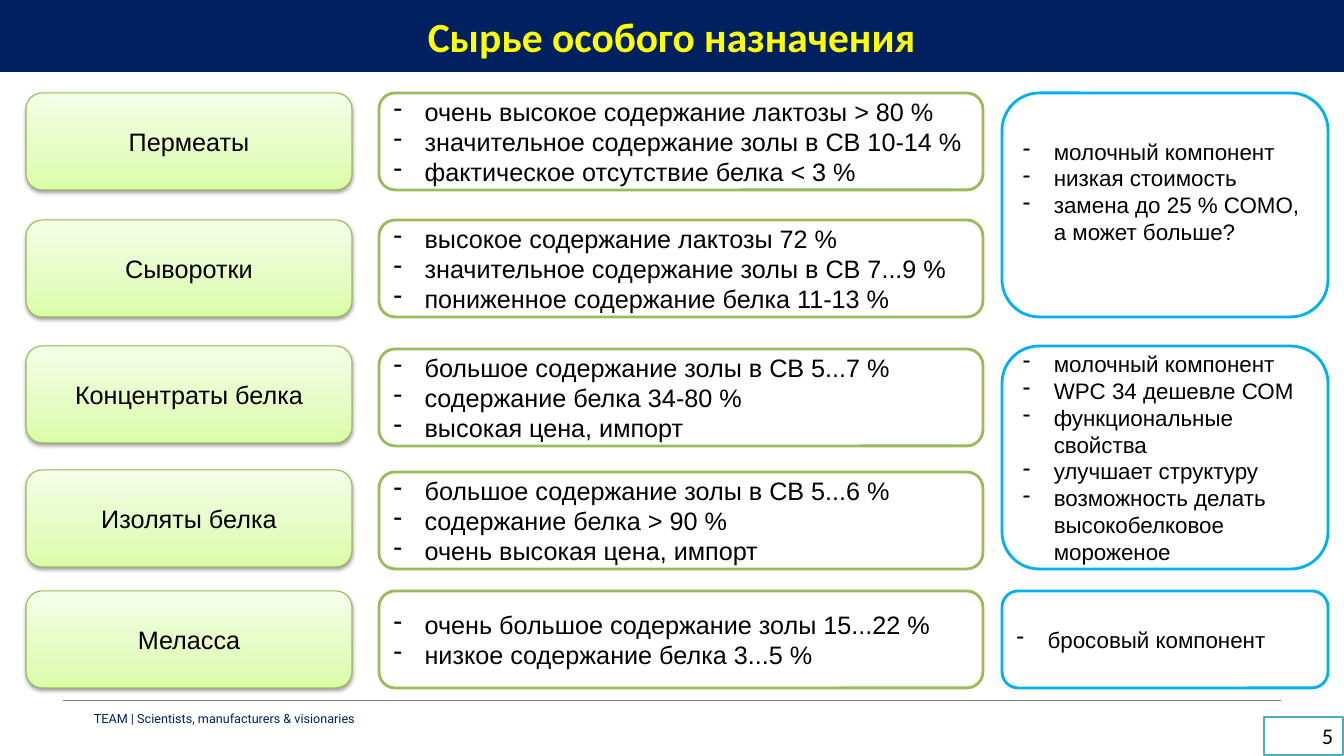
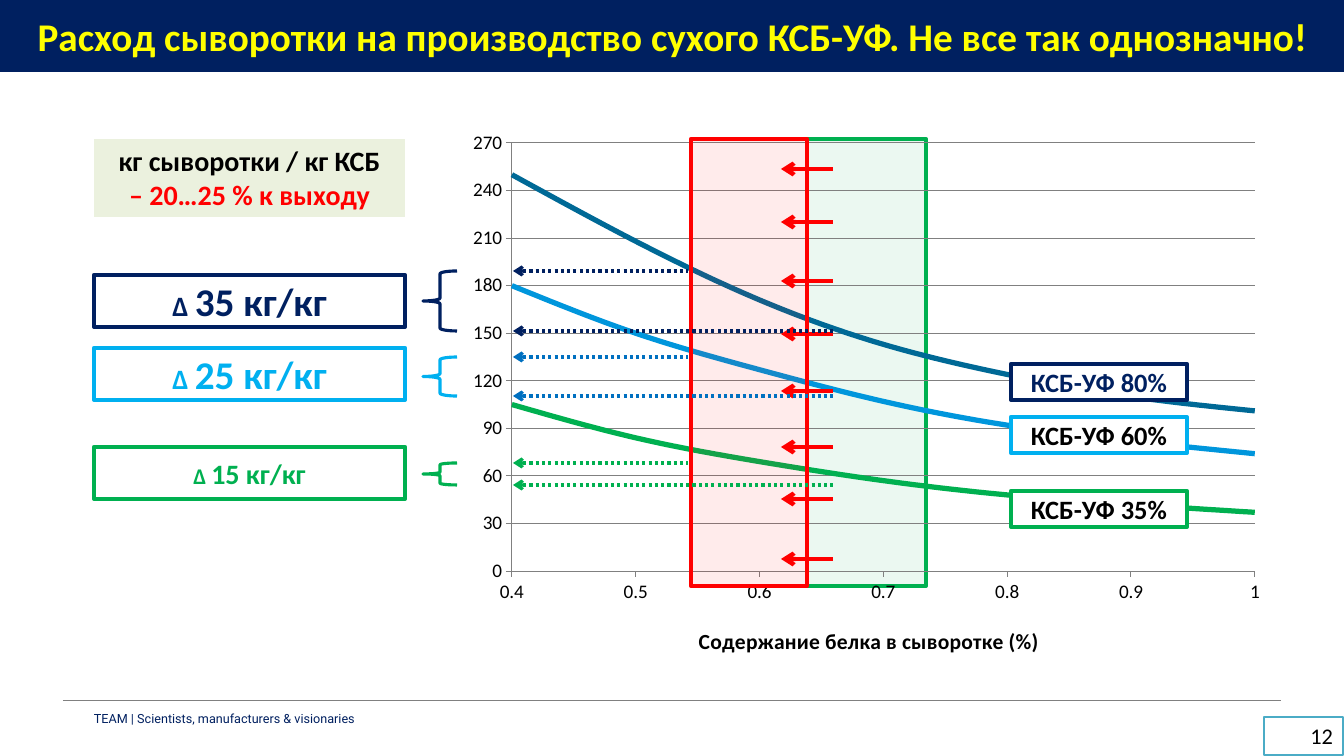
import pptx
import pptx.chart.data
import pptx.dml.color
import pptx.enum.chart
import pptx.enum.dml
import pptx.enum.shapes
import pptx.enum.text
import pptx.oxml.ns
import pptx.util
from lxml import etree

SCALE = 12192000 / 1344  # EMU in one px
NAVY, SKY, GREEN, RED = "002060", "00B0F0", "00B050", "FF0000"
BLUE, YELLOW, WHITE, BLACK, GREY = "0070C0", "FFFF00", "FFFFFF", "000000", "808080"
OLIVE, OLIVE_EDGE, CREAM, TEAL = "9BBB59", "98B955", "EBF1DE", "4BACC6"
LABEL_STOPS = [(0, "DAFDA7"), (35, "E4FCC2"), (100, "F5FFE7")]

SHAPE = pptx.enum.shapes.MSO_SHAPE
ALIGN = pptx.enum.text.PP_ALIGN
ANCHOR = pptx.enum.text.MSO_ANCHOR
DOTTED = pptx.enum.dml.MSO_LINE.ROUND_DOT
TICK = pptx.enum.chart.XL_TICK_MARK
qn = pptx.oxml.ns.qn

# Slide 1: group, top of its label, top of its properties, properties
GROUPS = [
    ("Пермеаты", 93, 93, ["очень высокое содержание лактозы > 80 %",
                          "значительное содержание золы в СВ 10-14 %",
                          "фактическое отсутствие белка < 3 %"]),
    ("Сыворотки", 220, 220, ["высокое содержание лактозы 72 %",
                             "значительное содержание золы в СВ 7...9 %",
                             "пониженное содержание белка 11-13 %"]),
    ("Концентраты белка", 346, 349, ["большое содержание золы в СВ 5...7 %",
                                     "содержание белка 34-80 %",
                                     "высокая цена, импорт"]),
    ("Изоляты белка", 470, 472, ["большое содержание золы в СВ 5...6 %",
                                 "содержание белка > 90 %",
                                 "очень высокая цена, импорт"]),
    ("Меласса", 591, 591, ["очень большое содержание золы 15...22 %",
                           "низкое содержание белка 3...5 %"]),
]
# Top, height, bottom inset, conclusions
CONCLUSIONS = [
    (93, 224, 32, ["молочный компонент", "низкая стоимость",
                   "замена до 25 % СОМО, а может больше?"]),
    (346, 223, 5, ["молочный компонент", "WPC 34 дешевле СОМ",
                   "функциональные свойства", "улучшает структуру",
                   "возможность делать высокобелковое мороженое"]),
    (591, 97, 5, ["бросовый компонент"]),
]

# Slide 2: whey consumption by protein content
PROTEIN = [0.4, 0.5, 0.6, 0.7, 0.8, 0.9, 1]
CURVES = [
    ("КСБ-УФ 80%", "006996", [250, 208, 171, 143, 124, 110, 101]),
    ("КСБ-УФ 60%", "0096DC", [180, 150, 127, 107, 92, 82, 74]),
    ("КСБ-УФ 35%", GREEN, [105, 84, 69, 57, 48, 42, 37]),
]
# Curve name, top of its tag, edge, text colour
CURVE_TAGS = [("КСБ-УФ 80%", 364, NAVY, NAVY), ("КСБ-УФ 60%", 417, SKY, BLACK),
              ("КСБ-УФ 35%", 491, GREEN, BLACK)]
# Upper level, lower level, dots, brace and box colour, box top, text, sizes
DELTAS = [
    (271, 331, NAVY, NAVY, 275, "35 кг/кг", 20, 28),
    (357, 396, BLUE, SKY, 348, "25 кг/кг", 20, 28),
    (463, 485, GREEN, GREEN, 447, "15 кг/кг", 16, 20),
]
SHIFT_LEVELS = [169, 222, 281, 334, 391, 447, 499, 559]


def px(length):
    return pptx.util.Emu(round(length * SCALE))


def rgb(colour):
    return pptx.dml.color.RGBColor.from_string(colour)


def add_xml(parent, tag, **attributes):
    child = etree.SubElement(parent, qn(tag))
    for key, value in attributes.items():
        child.set(key, str(value))
    return child


def style_line(line, colour, width):
    line.color.rgb = rgb(colour)
    line.width = pptx.util.Pt(width)


def add_box(slide, at, fill=None, edge=None, width=2, kind=SHAPE.RECTANGLE, alpha=None):
    box = slide.shapes.add_shape(kind, *map(px, at))
    box.shadow.inherit = False
    if fill:
        box.fill.solid()
        box.fill.fore_color.rgb = rgb(fill)
        if alpha:
            tint = box.fill._xPr.find(".//" + qn("a:srgbClr"))
            add_xml(tint, "a:alpha", val=alpha * 1000)
    else:
        box.fill.background()
    if edge:
        style_line(box.line, edge, width)
    else:
        box.line.fill.background()
    return box


def write(box, paragraphs, font, align=ALIGN.CENTER, anchor=ANCHOR.MIDDLE, bold=False, dash=False):
    """Each paragraph is a list of (text, size, colour) runs."""
    frame = box.text_frame
    frame.word_wrap = True
    frame.vertical_anchor = anchor
    for number, runs in enumerate(paragraphs):
        paragraph = frame.paragraphs[0] if number == 0 else frame.add_paragraph()
        paragraph.alignment = align
        if dash:
            properties = paragraph._p.get_or_add_pPr()
            properties.set("marL", str(px(31)))
            properties.set("indent", str(-px(31)))
            add_xml(properties, "a:buChar", char="-")
        for text, size, colour in runs:
            run = paragraph.add_run()
            run.text = text
            run.font.name = font
            run.font.size = pptx.util.Pt(size)
            run.font.bold = bold
            run.font.color.rgb = rgb(colour)


def add_line(slide, start, end, colour, width, dash=None, arrow=False):
    """Draw a straight line, with an optional arrowhead at its start."""
    line = slide.shapes.add_connector(pptx.enum.shapes.MSO_CONNECTOR.STRAIGHT,
                                      *map(px, start + end))
    style_line(line.line, colour, width)
    if dash:
        line.line.dash_style = dash
    if arrow:
        add_xml(line.line._get_or_add_ln(), "a:headEnd", type="arrow")
    add_xml(line._element.spPr, "a:effectLst")


def add_dash_list(slide, at, items, size, edge):
    box = add_box(slide, at, WHITE, edge, kind=SHAPE.ROUNDED_RECTANGLE)
    write(box, [[(item, size, BLACK)] for item in items], "Arial", ALIGN.LEFT, dash=True)
    return box


def add_group_label(slide, at, text):
    label = add_box(slide, at, WHITE, OLIVE_EDGE, 0.75, SHAPE.ROUNDED_RECTANGLE)
    # Three-stop gradient, light at the top
    label.fill.gradient()
    label.fill.gradient_angle = 90
    properties = label._element.spPr
    stops = properties.find(".//" + qn("a:gsLst"))
    for stop in list(stops):
        stops.remove(stop)
    for position, colour in LABEL_STOPS:
        stop = add_xml(stops, "a:gs", pos=position * 1000)
        add_xml(stop, "a:srgbClr", val=colour)
    # Soft shadow below
    shadow = add_xml(properties.find(qn("a:effectLst")), "a:outerShdw", blurRad=39400,
                     dist=20300, dir=5400000, rotWithShape=0)
    add_xml(add_xml(shadow, "a:srgbClr", val=BLACK), "a:alpha", val=38000)
    write(label, [[(text, 18, BLACK)]], "Arial")


def new_slide(deck, title, title_size, number):
    """Add a slide with the shared title band, rule, footer and number."""
    slide = deck.slides.add_slide(deck.slide_layouts[6])
    add_line(slide, (63, 700), (1281, 700), GREY, 0.5)
    band = add_box(slide, (0, 0, 1344, 72), NAVY)
    write(band, [[(title, title_size, YELLOW)]], "Calibri", bold=True)
    footer = slide.shapes.add_textbox(*map(px, (94, 699, 384, 38)))
    frame = footer.text_frame
    frame.margin_left = frame.margin_right = frame.margin_top = frame.margin_bottom = 0
    write(footer, [[("TEAM | Scientists, manufacturers & visionaries", 9, NAVY)]],
          "Roboto", ALIGN.LEFT)
    number_box = add_box(slide, (1264, 717, 79, 38), WHITE, TEAL)
    write(number_box, [[(number, 16, BLACK)]], "Calibri", ALIGN.RIGHT, ANCHOR.TOP)
    return slide


def set_layout(holder, index, **fractions):
    """Fix the place of a chart part, in fractions of the chart."""
    for old in holder.findall(qn("c:layout")):
        holder.remove(old)
    layout = etree.Element(qn("c:layout"))
    manual = add_xml(layout, "c:manualLayout")
    if "w" in fractions:
        add_xml(manual, "c:layoutTarget", val="inner")
    add_xml(manual, "c:xMode", val="edge")
    add_xml(manual, "c:yMode", val="edge")
    for key, value in fractions.items():
        add_xml(manual, "c:" + key, val=value)
    holder.insert(index, layout)


def style_axis(axis, low, high, step, grid):
    axis.minimum_scale, axis.maximum_scale, axis.major_unit = low, high, step
    axis.major_tick_mark, axis.minor_tick_mark = TICK.OUTSIDE, TICK.NONE
    axis.has_major_gridlines = grid
    axis.has_minor_gridlines = False
    axis.tick_labels.font.size = pptx.util.Pt(13.7)
    axis.tick_labels.font.name = "Calibri"
    axis.tick_labels.font.color.rgb = rgb(BLACK)
    style_line(axis.format.line, GREY, 0.75)
    if grid:
        style_line(axis.major_gridlines.format.line, GREY, 0.75)


def add_whey_chart(slide):
    data = pptx.chart.data.XyChartData()
    for name, _, values in CURVES:
        points = data.add_series(name)
        for x, y in zip(PROTEIN, values):
            points.add_data_point(x, y)
    chart = slide.shapes.add_chart(pptx.enum.chart.XL_CHART_TYPE.XY_SCATTER_SMOOTH_NO_MARKERS,
                                   *map(px, (457, 121, 820, 551)), data).chart
    chart.has_legend = chart.has_title = False
    chart.font.name = "Calibri"
    chart.font.size = pptx.util.Pt(15.4)
    chart.font.color.rgb = rgb(BLACK)
    plot = chart.plots[0]
    plot.vary_by_categories = False
    for series, (_, colour, _) in zip(plot.series, CURVES):
        style_line(series.format.line, colour, 3.75)
        for smooth in series._element.iter(qn("c:smooth")):
            smooth.set("val", "1")
    # Axes and axis title
    style_axis(chart.category_axis, 0.4, 1, 0.1, False)
    style_axis(chart.value_axis, 0, 270, 30, True)
    axis_title = chart.category_axis.axis_title
    caption = axis_title.text_frame.paragraphs[0].add_run()
    caption.text = "Содержание белка в сыворотке (%)"
    caption.font.size = pptx.util.Pt(15.4)
    caption.font.name = "Calibri"
    caption.font.bold = True
    caption.font.color.rgb = rgb(BLACK)
    set_layout(axis_title._element, 1, x=0.29, y=0.91)
    # Plot place, and no background so that the ranges show through
    body = chart._chartSpace.find(qn("c:chart"))
    plot_area = body.find(qn("c:plotArea"))
    set_layout(plot_area, 0, x=0.067, y=0.04, w=0.906, h=0.777)
    add_xml(add_xml(plot_area, "c:spPr"), "a:noFill")
    clear = etree.Element(qn("c:spPr"))
    add_xml(clear, "a:noFill")
    add_xml(add_xml(clear, "a:ln"), "a:noFill")
    body.addnext(clear)


def build_materials(deck):
    slide = new_slide(deck, "Сырье особого назначения", 29.6, "5")
    for name, label_top, list_top, properties in GROUPS:
        add_group_label(slide, (26, label_top, 326, 97), name)
        add_dash_list(slide, (379, list_top, 604, 97), properties, 18, OLIVE)
    for top, height, inset, conclusions in CONCLUSIONS:
        box = add_dash_list(slide, (1002, top, 326, height), conclusions, 16, SKY)
        box.text_frame.margin_bottom = px(inset)


def build_consumption(deck):
    title = "Расход сыворотки на производство сухого КСБ-УФ. Не все так однозначно!"
    slide = new_slide(deck, title, 28, "12")
    # Chart between the two protein ranges
    add_box(slide, (807, 139, 119, 447), GREEN, GREEN, 3, alpha=8)
    add_whey_chart(slide)
    for level in SHIFT_LEVELS:
        add_line(slide, (781, level), (833, level), RED, 3, arrow=True)
    add_box(slide, (691, 139, 116, 447), RED, RED, 3, alpha=8)
    for name, top, edge, colour in CURVE_TAGS:
        tag = add_box(slide, (1011, top, 176, 36), WHITE, edge, 3)
        write(tag, [[(name, 18.9, colour)]], "Calibri", bold=True)
    # Differences read off the value axis
    for upper, lower, dots, colour, top, text, delta_size, size in DELTAS:
        for level, end in ((upper, 688), (lower, 833)):
            add_line(slide, (513, level), (end, level), dots, 2.25, DOTTED, arrow=True)
        add_box(slide, (423, upper, 34, lower - upper), None, colour, 2.25, SHAPE.LEFT_BRACE)
        box = add_box(slide, (94, top, 311, 52), WHITE, colour, 3)
        write(box, [[("Δ ", delta_size, colour), (text, size, colour)]], "Calibri", bold=True)
    unit = add_box(slide, (94, 139, 311, 78), CREAM)
    write(unit, [[("кг сыворотки / кг КСБ", 20, BLACK)], [("– 20…25 % к выходу", 20, RED)]],
          "Calibri", anchor=ANCHOR.TOP, bold=True)


def main():
    deck = pptx.Presentation()
    deck.slide_width, deck.slide_height = px(1344), px(756)
    build_materials(deck)
    build_consumption(deck)
    deck.save("out.pptx")


if __name__ == "__main__":
    main()
